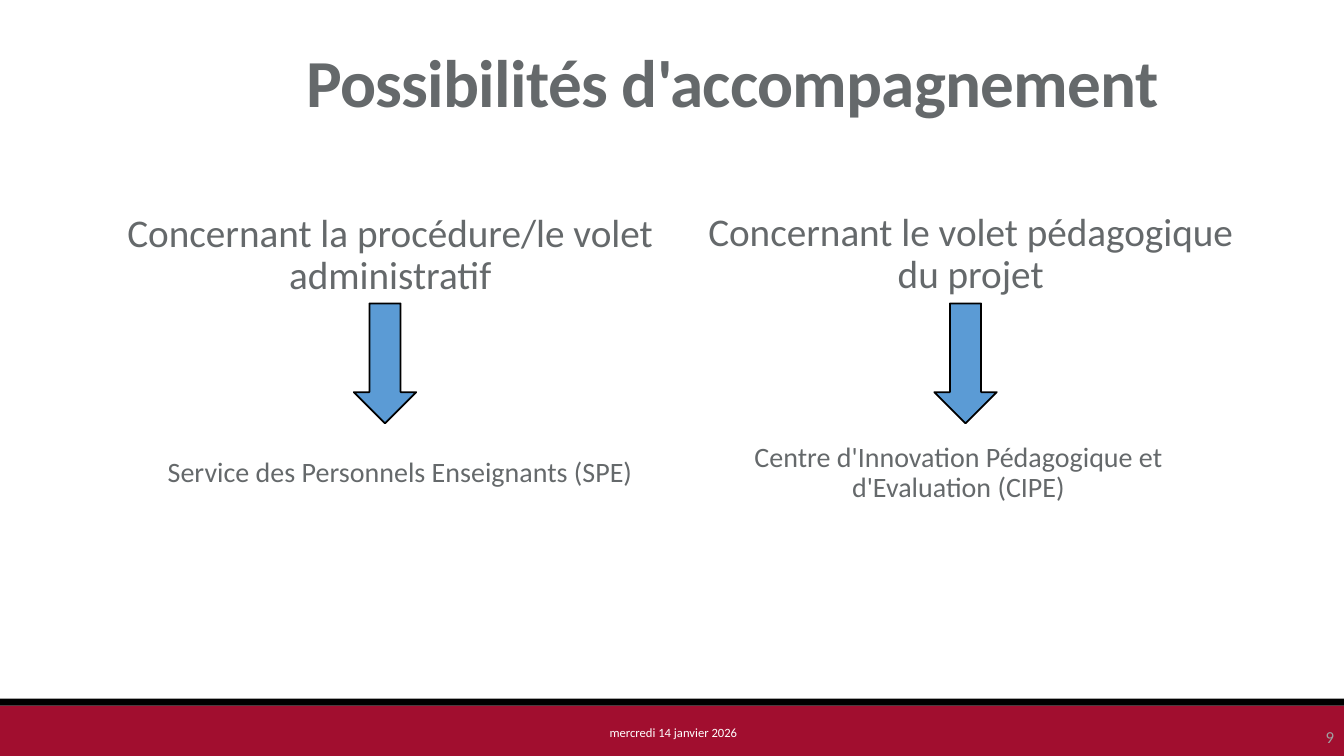
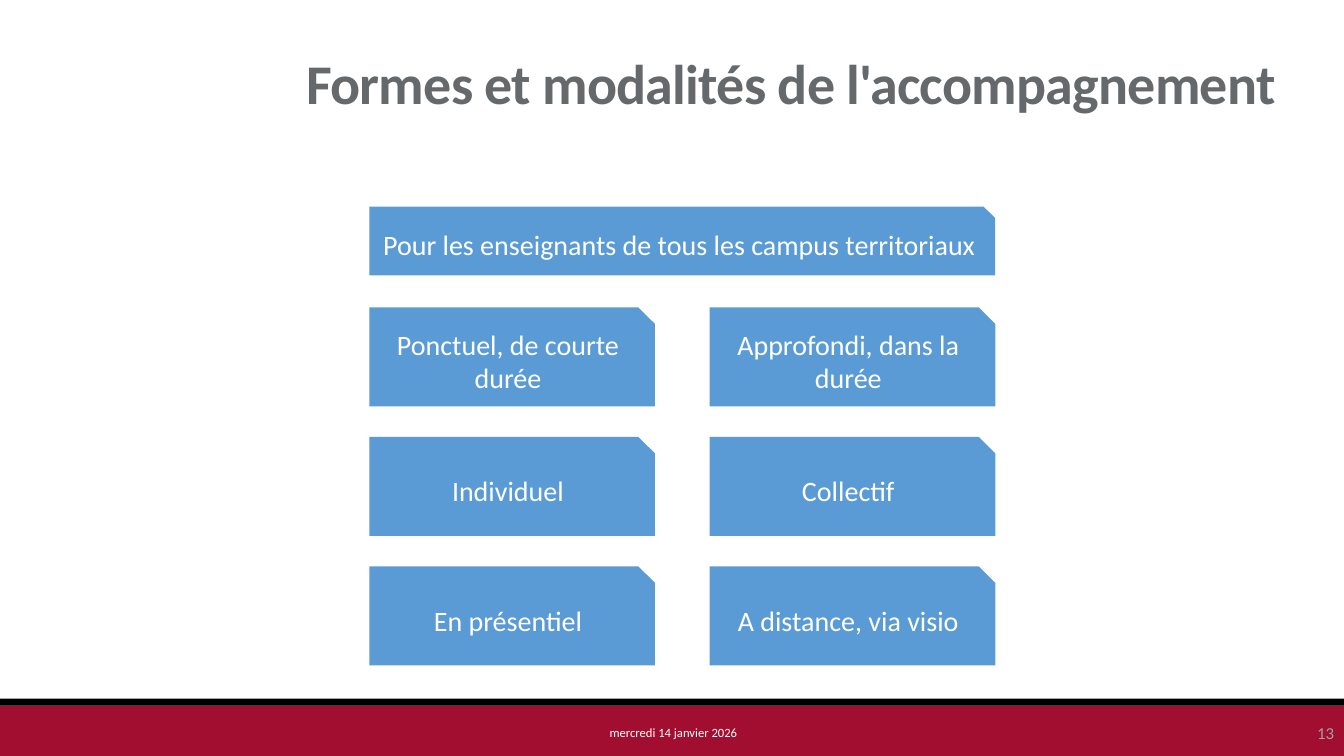
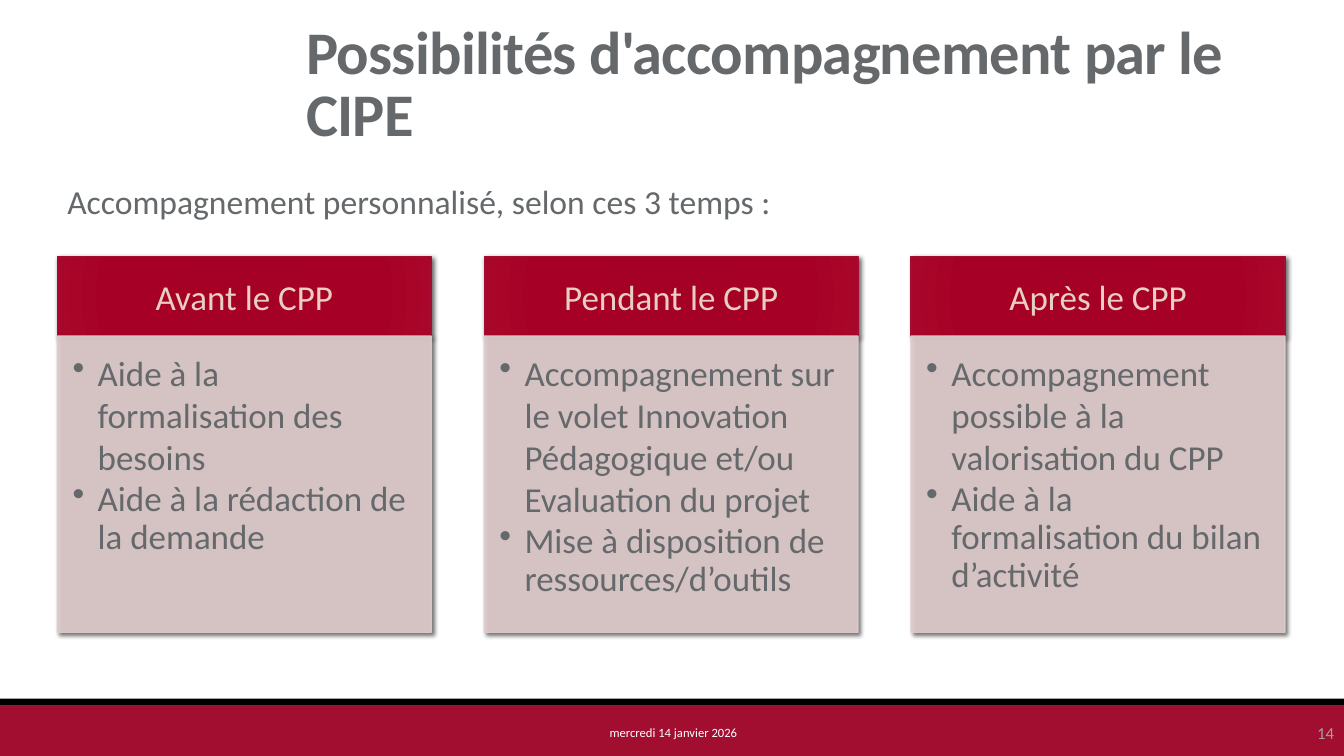
"""Builds three slides on the support offered to teaching projects."""
import dataclasses

import pptx
import pptx.dml.color
import pptx.enum.shapes
import pptx.enum.text
import pptx.oxml
import pptx.oxml.ns
import pptx.util
from lxml import etree

Pt = pptx.util.Pt
qn = pptx.oxml.ns.qn
RGB = pptx.dml.color.RGBColor.from_string
SHAPE = pptx.enum.shapes.MSO_SHAPE
ALIGN = pptx.enum.text.PP_ALIGN
ANCHOR = pptx.enum.text.MSO_ANCHOR


@dataclasses.dataclass(frozen=True)
class Theme:
    font: str = "Calibri"
    grey: str = "65696B"
    pale_grey: str = "9FA1A2"
    white: str = "FFFFFF"
    black: str = "000000"
    red: str = "A10E2F"
    blue: str = "5B9BD5"
    pink: str = "E0CCCD"
    cream: str = "E7D0C1"
    header_stops: tuple = ((0, "A30025"), (34, "A50025"), (70, "A70026"), (100, "A8072B"))
    date_size: float = 9
    number_size: float = 12
    box_size: float = 20
    intro_size: float = 24
    card_size: float = 25
    lead_size: float = 28


def write(tf, text, size, color, font, bold=False, align=ALIGN.LEFT, line=1.0,
          after=0, bullet=False, tracking=0, first=True):
    p = tf.paragraphs[0] if first else tf.add_paragraph()
    p.alignment, p.line_spacing, p.space_after = align, line, Pt(after)
    if bullet:
        pPr = p._p.get_or_add_pPr()
        pPr.set("marL", str(Pt(18)))
        pPr.set("indent", str(-Pt(18)))
        etree.SubElement(pPr, qn("a:buChar")).set("char", "•")
    r = p.add_run()
    r.text = text
    r.font.name, r.font.size, r.font.bold = font, Pt(size), bold
    r.font.color.rgb = RGB(color)
    if tracking:
        r._r.get_or_add_rPr().set("spc", str(tracking))


class Deck:
    def __init__(self, theme):
        self.t = theme
        self.prs = pptx.Presentation()
        self.prs.slide_width, self.prs.slide_height = Pt(960), Pt(540)
        self.s = None

    def slide(self, title, size, number, title_width=748, number_top=509):
        t = self.t
        self.s = self.prs.slides.add_slide(self.prs.slide_layouts[6])
        self.shape(SHAPE.RECTANGLE, (0, 504, 960, 36), t.red)
        self.shape(SHAPE.RECTANGLE, (0, 499, 960, 5), t.black)
        self.text((427, 505.5, 106.5, 36), "mercredi 14 janvier 2026", t.date_size,
                  t.white, align=ALIGN.RIGHT)
        self.text((211.7, 16.5, title_width, 91.5), title, size, t.grey, bold=True,
                  line=0.85, tracking=-50)
        self.text((744, number_top, 216, 29), number, t.number_size, t.pale_grey,
                  align=ALIGN.RIGHT)

    def frame(self, sp, anchor=ANCHOR.MIDDLE, insets=(7.2, 3.6, 7.2, 3.6)):
        tf = sp.text_frame
        tf.word_wrap, tf.vertical_anchor = True, anchor
        tf.margin_left, tf.margin_top, tf.margin_right, tf.margin_bottom = map(Pt, insets)
        return tf

    def text(self, at, text, size, color, anchor=ANCHOR.MIDDLE,
             insets=(7.2, 3.6, 7.2, 3.6), **style):
        sp = self.s.shapes.add_textbox(*map(Pt, at))
        write(self.frame(sp, anchor, insets), text, size, color, self.t.font, **style)

    def lead(self, at, text, size):
        self.text(at, text, size, self.t.grey, insets=(7.2, 3.6, 0, 3.6),
                  align=ALIGN.CENTER, line=0.9)

    def shape(self, kind, at, fill, line=None, width=1):
        sp = self.s.shapes.add_shape(kind, *map(Pt, at))
        sp.shadow.inherit = False
        sp.fill.solid()
        sp.fill.fore_color.rgb = RGB(fill)
        if line:
            sp.line.color.rgb = RGB(line)
            sp.line.width = Pt(width)
        else:
            sp.line.fill.background()
        return sp

    def box(self, at, text):
        sp = self.shape(SHAPE.SNIP_1_RECTANGLE, at, self.t.blue)
        write(self.frame(sp), text, self.t.box_size, self.t.white, self.t.font,
              align=ALIGN.CENTER)

    def drop_shadow(self, sp, blur):
        effects = sp._element.spPr.find(qn("a:effectLst"))
        effects.append(pptx.oxml.parse_xml(
            f'<a:outerShdw {pptx.oxml.ns.nsdecls("a")} blurRad="{Pt(blur)}" '
            f'dist="{Pt(2)}" dir="2700000"><a:srgbClr val="{self.t.black}">'
            '<a:alpha val="60000"/></a:srgbClr></a:outerShdw>'))

    def radial(self, sp):
        stops = "".join(f'<a:gs pos="{pos * 1000}"><a:srgbClr val="{color}"/></a:gs>'
                        for pos, color in self.t.header_stops)
        spPr = sp._element.spPr
        spPr.replace(spPr.find(qn("a:solidFill")), pptx.oxml.parse_xml(
            f'<a:gradFill {pptx.oxml.ns.nsdecls("a")}><a:gsLst>{stops}</a:gsLst>'
            '<a:path path="circle"><a:fillToRect l="100000" t="100000" r="100000" '
            'b="100000"/></a:path></a:gradFill>'))

    def card(self, left, heading, points):
        t = self.t
        header = self.shape(SHAPE.RECTANGLE, (left, 183, 267, 57), t.red, t.red)
        self.radial(header)
        self.drop_shadow(header, 3.5)
        write(self.frame(header, insets=(13.7, 8, 13.7, 8)), heading, t.card_size,
              t.cream, t.font, align=ALIGN.CENTER)
        body = self.shape(SHAPE.RECTANGLE, (left, 240, 267, 211.7), t.pink, t.pink)
        for color in body._element.spPr.iter(qn("a:srgbClr")):
            etree.SubElement(color, qn("a:alpha")).set("val", "90000")
        self.drop_shadow(body, 3)
        tf = self.frame(body, ANCHOR.TOP, (10.8, 10.8, 13.7, 15.8))
        for i, point in enumerate(points):
            write(tf, point, t.card_size, t.grey, t.font, line=0.9 if i else 1.0,
                  after=3, bullet=True, first=i == 0)


def support_options(d):
    t = d.t
    d.slide("Possibilités d'accompagnement", 48, "9", title_width=667, number_top=512)
    d.lead((86.4, 213.8, 391.7, 248.4), "Service des Personnels Enseignants (SPE)", t.box_size)
    d.lead((483.8, 213.8, 394.6, 248.4),
           "Centre d'Innovation Pédagogique et d'Evaluation (CIPE)", t.box_size)
    d.lead((492.5, 147, 394.6, 69.8), "Concernant le volet pédagogique du projet", t.lead_size)
    d.lead((70.6, 160.6, 409, 44), "Concernant la procédure/le volet administratif", t.lead_size)
    for left in (252.7, 667.4):
        d.shape(SHAPE.DOWN_ARROW, (left, 216.7, 44.6, 85.7), t.blue, t.black, 1.25)


def support_forms(d):
    d.slide("Formes et modalités de l'accompagnement", 40, "13")
    left, top, pitch_x, pitch_y = 263.8, 219.6, 243.1, 92.5
    d.box((left, 147.6, 447, 49), "Pour les enseignants de tous les campus territoriaux")
    rows = (("Ponctuel, de courte durée", "Approfondi, dans la durée"),
            ("Individuel", "Collectif"),
            ("En présentiel", "A distance, via visio"))
    for i, row in enumerate(rows):
        for j, text in enumerate(row):
            d.box((left + j * pitch_x, top + i * pitch_y, 204, 70.6), text)


def support_stages(d):
    d.slide("Possibilités d'accompagnement par le CIPE", 43.2, "14")
    cards = (
        ("Avant le CPP", ("Aide à la formalisation des besoins",
                          "Aide à la rédaction de la demande")),
        ("Pendant le CPP", ("Accompagnement sur le volet Innovation Pédagogique "
                            "et/ou Evaluation du projet",
                            "Mise à disposition de ressources/d’outils")),
        ("Après le CPP", ("Accompagnement possible à la valorisation du CPP",
                          "Aide à la formalisation du bilan d’activité")),
    )
    for i, (heading, points) in enumerate(cards):
        d.card(41 + i * 304.9, heading, points)
    d.text((41, 126, 544.3, 36), "Accompagnement personnalisé, selon ces 3 temps :",
           d.t.intro_size, d.t.grey, anchor=ANCHOR.TOP)


def main():
    d = Deck(Theme())
    support_options(d)
    support_forms(d)
    support_stages(d)
    d.prs.save("out.pptx")


if __name__ == "__main__":
    main()
